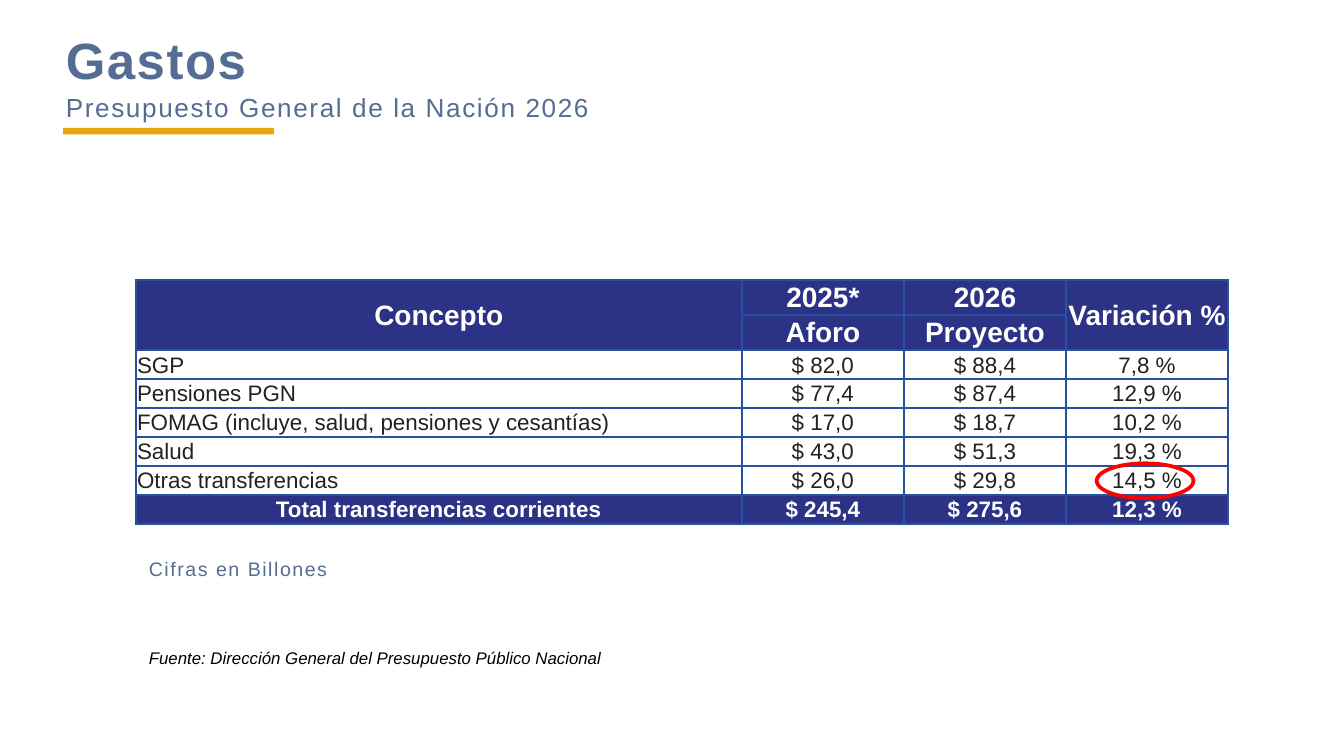
import pptx
import pptx.util
import pptx.dml.color
import pptx.enum.shapes
import pptx.enum.text
import pptx.oxml
import pptx.oxml.ns

COLORS = {"slate": "556D93", "gold": "E9A70B", "navy": "2C3386", "border": "26529E",
          "ink": "222222", "white": "FFFFFF", "black": "000000", "red": "FF0000"}
LEFT, CENTER = pptx.enum.text.PP_ALIGN.LEFT, pptx.enum.text.PP_ALIGN.CENTER
MIDDLE = pptx.enum.text.MSO_ANCHOR.MIDDLE
RGB = pptx.dml.color.RGBColor.from_string

presentation = pptx.Presentation()
presentation.slide_width = pptx.util.Inches(10)
presentation.slide_height = presentation.slide_width * 9 // 16
slide = presentation.slides.add_slide(presentation.slide_layouts[5])


def place(left, top, width, height):
    """Turn percentages of the slide's size into lengths."""
    slide_width, slide_height = presentation.slide_width, presentation.slide_height
    return [int(share * size / 100) for share, size in
            ((left, slide_width), (top, slide_height), (width, slide_width), (height, slide_height))]


def format_paragraph(paragraph, size, color, bold=False, italic=False, spacing=0, alignment=LEFT):
    paragraph.alignment = alignment
    for run in paragraph.runs:
        run.font.name = "Arial"
        run.font.size = pptx.util.Pt(size)
        run.font.bold = bold
        run.font.italic = italic
        run.font.color.rgb = RGB(COLORS[color])
        if spacing:
            run.font._element.set("spc", str(int(spacing * 100)))


# Title and subtitle
title = slide.shapes.title
title.left, title.top, title.width, title.height = place(4.8, 3.56, 67.8, 12.8)
frame = title.text_frame
frame.text = "Gastos\nPresupuesto General de la Nación 2026"
frame.auto_size = pptx.enum.text.MSO_AUTO_SIZE.NONE
frame.vertical_anchor = pptx.enum.text.MSO_ANCHOR.TOP
frame.margin_left = frame.margin_top = pptx.util.Inches(0.01)
frame.margin_right = frame.margin_bottom = 0
heading, subtitle = frame.paragraphs
format_paragraph(heading, 27.3, "slate", bold=True, spacing=0.85)
format_paragraph(subtitle, 14, "slate", spacing=0.85)
subtitle.space_before = pptx.util.Pt(0.8)

underline = slide.shapes.add_shape(pptx.enum.shapes.MSO_SHAPE.RECTANGLE, *place(4.7, 16.9, 15.7, 0.89))
underline.shadow.inherit = False
underline.fill.solid()
underline.fill.fore_color.rgb = RGB(COLORS["gold"])
underline.line.fill.background()

# Table of current transfers
rows = [
    ["Concepto", "2025*", "2026", "Variación %"],
    ["", "Aforo", "Proyecto", ""],
    ["SGP", "$ 82,0", "$ 88,4", "7,8 %"],
    ["Pensiones PGN", "$ 77,4", "$ 87,4", "12,9 %"],
    ["FOMAG (incluye, salud, pensiones y cesantías)", "$ 17,0", "$ 18,7", "10,2 %"],
    ["Salud", "$ 43,0", "$ 51,3", "19,3 %"],
    ["Otras transferencias", "$ 26,0", "$ 29,8", "14,5 %"],
    ["Total transferencias corrientes", "$ 245,4", "$ 275,6", "12,3 %"],
]
header_rows, total_row = 2, len(rows) - 1
table = slide.shapes.add_table(len(rows), 4, *place(10.1, 37.01, 81.3, 32.3)).table
table.first_row = table.horz_banding = False
for column, share in zip(table.columns, (45.1, 12.06, 12.06, 12.06)):
    column.width = int(presentation.slide_width * share / 100)
for row_index, values in enumerate(rows):
    is_header = row_index < header_rows
    is_dark = is_header or row_index == total_row
    table.rows[row_index].height = int(presentation.slide_height * (4.65 if is_header else 3.83) / 100)
    for column_index, value in enumerate(values):
        cell = table.cell(row_index, column_index)
        cell.text = value
        cell.vertical_anchor = MIDDLE
        cell.margin_left = cell.margin_right = cell.margin_top = pptx.util.Inches(0.01)
        cell.margin_bottom = 0
        format_paragraph(cell.text_frame.paragraphs[0], 15 if is_header else 12,
                         "white" if is_dark else "ink", bold=is_dark,
                         alignment=CENTER if is_dark or column_index else LEFT)
        if is_dark:
            cell.fill.solid()
            cell.fill.fore_color.rgb = RGB(COLORS["navy"])
        else:
            cell.fill.background()
        properties = cell._tc.get_or_add_tcPr()
        for position, side in enumerate(("lnL", "lnR", "lnT", "lnB")):
            properties.insert(position, pptx.oxml.parse_xml(
                f'<a:{side} {pptx.oxml.ns.nsdecls("a")} w="12700"><a:solidFill>'
                f'<a:srgbClr val="{COLORS["border"]}"/></a:solidFill></a:{side}>'))
for column_index in (0, 3):
    table.cell(0, column_index).merge(table.cell(1, column_index))

# Highlighted variation
highlight = slide.shapes.add_shape(pptx.enum.shapes.MSO_SHAPE.OVAL, *place(81.6, 61.3, 7.2, 4.62))
highlight.shadow.inherit = False
highlight.fill.background()
highlight.line.color.rgb = RGB(COLORS["red"])
highlight.line.width = pptx.util.Pt(2)

# Notes under the table
captions = [
    ("Fuente: Dirección General del Presupuesto Público Nacional", 84.8, 4.45,
     {"size": 9, "color": "black", "italic": True}),
    ("Cifras en Billones", 72.8, 5.16, {"size": 10.5, "color": "slate", "spacing": 0.85}),
]
for text, top, height, style in captions:
    caption = slide.shapes.add_textbox(*place(10.1, top, 50, height))
    caption.text_frame.word_wrap = True
    caption.text_frame.text = text
    format_paragraph(caption.text_frame.paragraphs[0], **style)

presentation.save("out.pptx")
